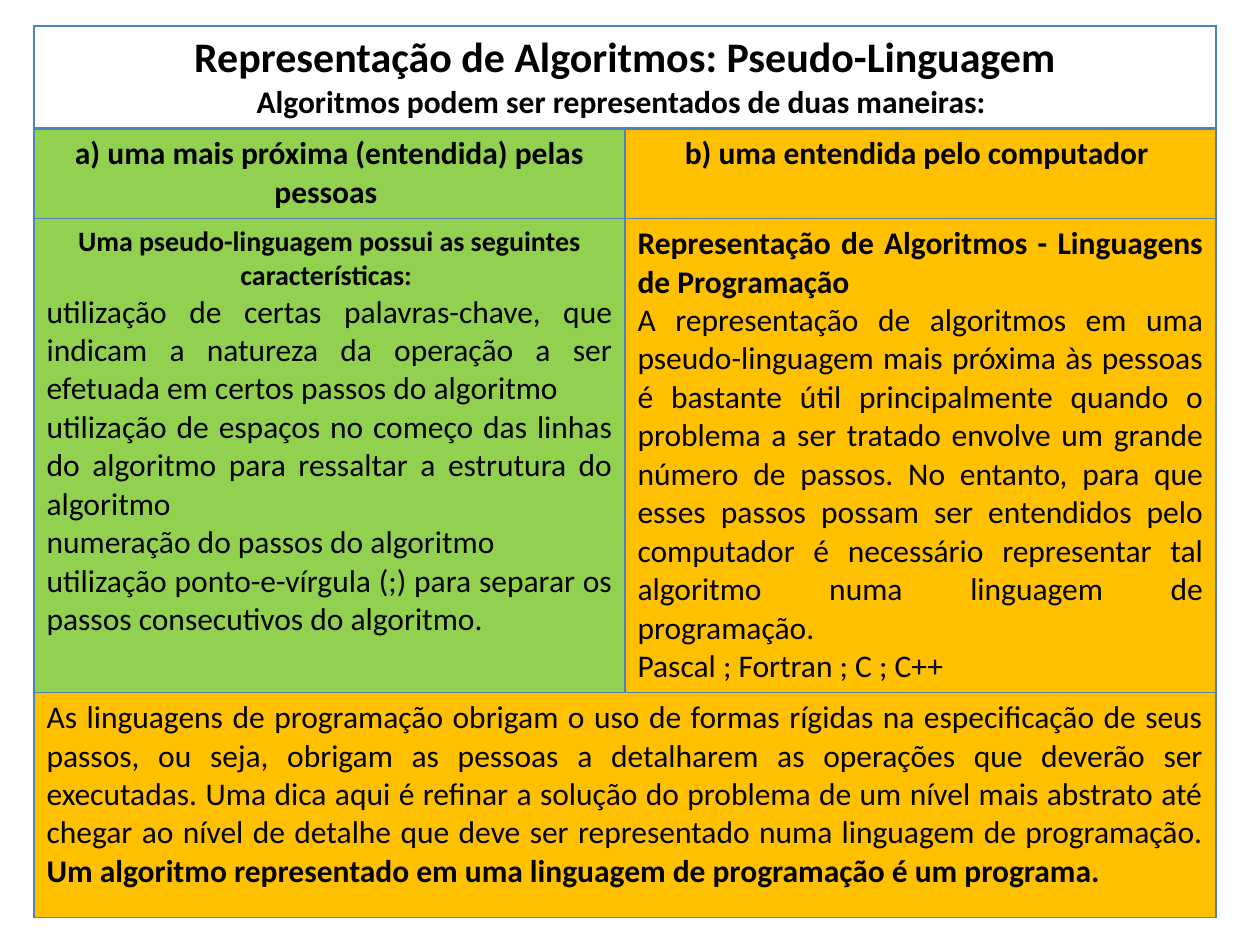
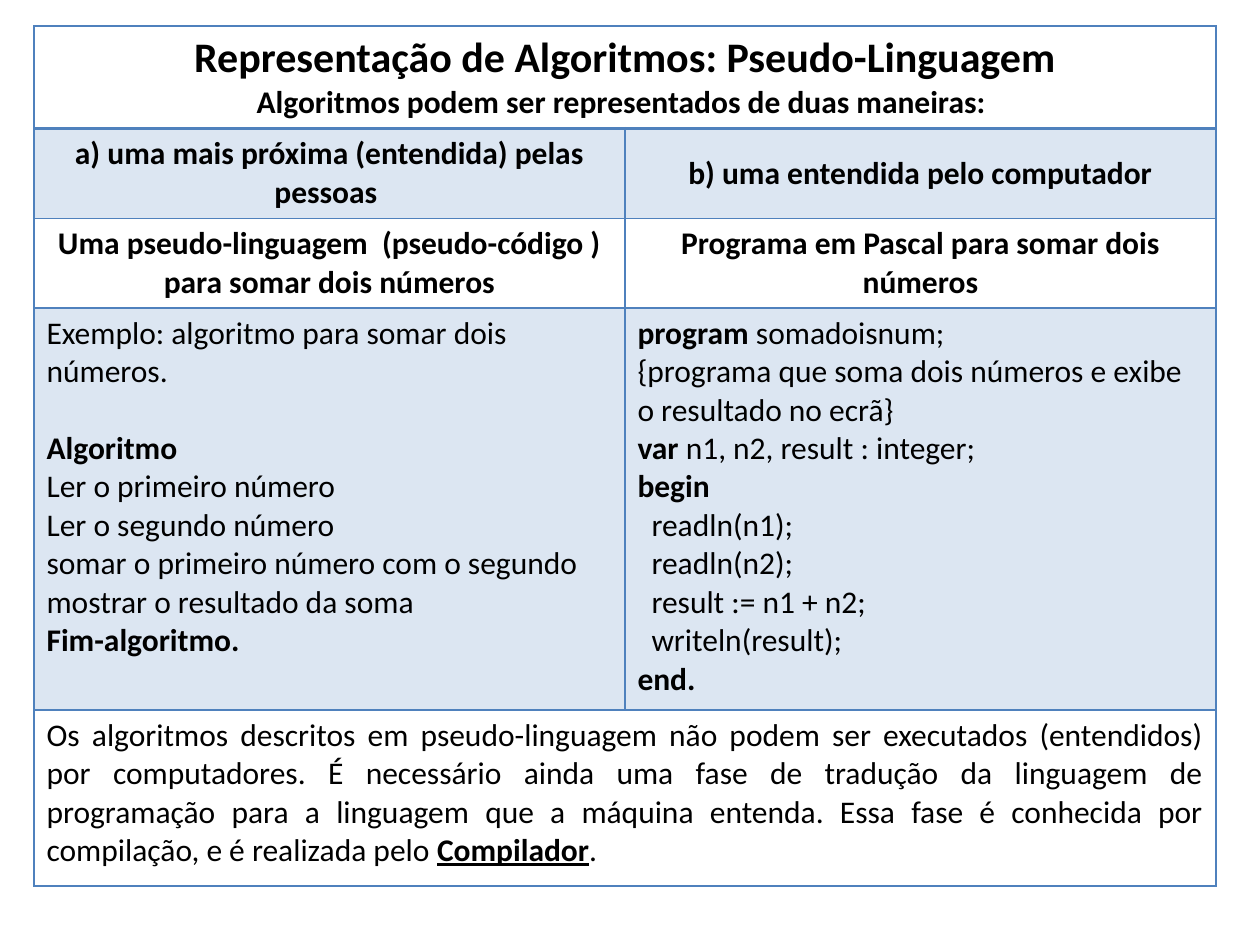
from dataclasses import dataclass

from lxml import etree
from pptx import Presentation, util as u
from pptx.dml.color import RGBColor
from pptx.enum import text
from pptx.oxml.ns import qn

# Shared look
PX_PER_INCH = 126
FONT = "Calibri"
BLACK, BLUE, PALE_BLUE = "000000", "4F81BD", "DCE6F2"
GREEN, AMBER = "92D050", "FFC000"
LEFT, TOP, COLUMN = 34, 26, 591
CENTER, JUSTIFY = text.PP_ALIGN.CENTER, text.PP_ALIGN.JUSTIFY
START = text.PP_ALIGN.LEFT
TOP_ANCHOR, MIDDLE = text.MSO_ANCHOR.TOP, text.MSO_ANCHOR.MIDDLE


@dataclass
class Run:
    words: str
    bold: bool = False
    underline: bool = False


@dataclass
class Para:
    runs: list[Run]
    align: text.PP_ALIGN = START
    size: int = 18
    before: int = 0
    indent: int = 0


@dataclass
class Cell:
    paras: list[Para]
    fill: str | None = None
    anchor: text.MSO_ANCHOR = TOP_ANCHOR


@dataclass
class Row:
    height: int
    cells: list[Cell]  # a single cell spans both columns
    rule: int = 1  # width of the line below, in points


def px(n: int) -> u.Emu:
    return u.Emu(round(n * 914400 / PX_PER_INCH))


def rgb(color: str) -> RGBColor:
    return RGBColor.from_string(color)


def plain(words: str, align: text.PP_ALIGN = START, indent: int = 0) -> Para:
    return Para([Run(words)], align, indent=indent)


def bold(words: str, align: text.PP_ALIGN = START, size: int = 18, before: int = 0) -> Para:
    return Para([Run(words, True)], align, size, before)


def set_border(cell, side: str, points: int) -> None:
    ln = etree.SubElement(cell._tc.get_or_add_tcPr(), qn(f"a:ln{side}"), w=str(u.Pt(points)))
    fill = etree.SubElement(ln, qn("a:solidFill"))
    etree.SubElement(fill, qn("a:srgbClr"), val=BLUE)


def write_para(p, para: Para) -> None:
    p.alignment = para.align
    p.space_before = u.Pt(para.before)
    if para.indent:
        p._p.get_or_add_pPr().set("marL", str(px(para.indent)))
    for run in para.runs:
        r = p.add_run()
        r.text = run.words
        r.font.name, r.font.size = FONT, u.Pt(para.size)
        r.font.bold, r.font.underline = run.bold, run.underline
        r.font.color.rgb = rgb(BLACK)


def write_cell(target, cell: Cell) -> None:
    target.vertical_anchor = cell.anchor
    tf = target.text_frame
    for i, para in enumerate(cell.paras):
        write_para(tf.add_paragraph() if i else tf.paragraphs[0], para)


def add_table_slide(prs, rows: list[Row]) -> None:
    s = prs.slides.add_slide(prs.slide_layouts[6])
    height = sum(row.height for row in rows)
    table = s.shapes.add_table(len(rows), 2, px(LEFT), px(TOP), px(2 * COLUMN), px(height)).table
    table.first_row = table.horz_banding = False
    for column in table.columns:
        column.width = px(COLUMN)
    rule_above = 1
    for y, row in enumerate(rows):
        table.rows[y].height = px(row.height)
        if len(row.cells) == 1:
            table.cell(y, 0).merge(table.cell(y, 1))
        for x in range(2):
            target = table.cell(y, x)
            for side, points in (("L", 1), ("R", 1), ("T", rule_above), ("B", row.rule)):
                set_border(target, side, points)
            fill = row.cells[min(x, len(row.cells) - 1)].fill
            if fill:
                target.fill.solid()
                target.fill.fore_color.rgb = rgb(fill)
            else:
                target.fill.background()
        for x, cell in enumerate(row.cells):
            write_cell(table.cell(y, x), cell)
        rule_above = row.rule


# Rows that open both tables
TITLE_ROW = Row(102, [Cell([
    bold("Representação de Algoritmos: Pseudo-Linguagem", CENTER, 24),
    bold("Algoritmos podem ser representados de duas maneiras: ", CENTER),
])], rule=2)


def heading_row(fills: tuple[str, str], anchor: text.MSO_ANCHOR, second_end: str = "") -> Row:
    headings = ("a) uma mais próxima (entendida) pelas pessoas ",
                "b) uma entendida pelo computador" + second_end)
    return Row(90, [Cell([bold(h, CENTER)], f, anchor) for h, f in zip(headings, fills)])


# Slide 1: the two kinds of representation
KEY_FEATURES = [
    "utilização de certas palavras-chave, que indicam a natureza da operação a ser "
    "efetuada em certos passos do algoritmo",
    "utilização de espaços no começo das linhas do algoritmo para ressaltar a estrutura "
    "do algoritmo",
    "numeração do passos do algoritmo",
    "utilização ponto-e-vírgula (;) para separar os passos consecutivos do algoritmo.",
]
CONCEPTS = [
    TITLE_ROW,
    heading_row((GREEN, AMBER), TOP_ANCHOR, " "),
    Row(474, [
        Cell([bold("Uma pseudo-linguagem possui as seguintes características: ", CENTER, 16)]
             + [plain(feature, JUSTIFY) for feature in KEY_FEATURES], GREEN),
        Cell([
            bold("Representação de Algoritmos - Linguagens de Programação", JUSTIFY),
            plain("A representação de algoritmos em uma pseudo-linguagem mais próxima às "
                  "pessoas é bastante útil principalmente quando o problema a ser tratado "
                  "envolve um grande número de passos. No entanto, para que esses passos "
                  "possam ser entendidos pelo computador é necessário representar tal "
                  "algoritmo numa linguagem de programação.", JUSTIFY),
            plain("Pascal ; Fortran ; C ; C++", JUSTIFY),
        ], AMBER),
    ]),
    Row(225, [Cell([Para([
        Run("As linguagens de programação obrigam o uso de formas rígidas na especificação "
            "de seus passos, ou seja, obrigam as pessoas a detalharem as operações que "
            "deverão ser executadas. Uma dica aqui é refinar a solução do problema de um "
            "nível mais abstrato até chegar ao nível de detalhe que deve ser representado "
            "numa linguagem de programação. "),
        Run("Um algoritmo representado em uma linguagem de programação é um programa.", True),
    ], JUSTIFY)], AMBER)]),
]

# Slide 2: the same sum in pseudo-code and in Pascal
STEPS = ["Ler o primeiro número", "Ler o segundo número",
         "somar o primeiro número com o segundo", "mostrar o resultado da soma"]
STATEMENTS = ["readln(n1);", "readln(n2);", "result := n1 + n2;", "writeln(result);"]
EXAMPLE = [
    TITLE_ROW,
    heading_row((PALE_BLUE, PALE_BLUE), MIDDLE),
    Row(89, [
        Cell([bold("Uma pseudo-linguagem  (pseudo-código ) para somar dois números", CENTER)]),
        Cell([bold("Programa em Pascal para somar dois números", CENTER)]),
    ]),
    Row(402, [
        Cell([plain("Exemplo: algoritmo para somar dois números."),
              bold("Algoritmo", before=22),
              *[plain(step) for step in STEPS],
              bold("Fim-algoritmo.")], PALE_BLUE),
        Cell([Para([Run("program ", True), Run("somadoisnum;")]),
              plain("{programa que soma dois números e exibe o resultado no ecrã}"),
              Para([Run("var", True), Run(" n1, n2, result : integer;")]),
              bold("begin"),
              *[plain(statement, indent=14) for statement in STATEMENTS],
              bold("end.")], PALE_BLUE),
    ]),
    Row(176, [Cell([Para([
        Run("Os algoritmos descritos em pseudo-linguagem não podem ser executados "
            "(entendidos) por computadores. É necessário ainda uma fase de tradução da "
            "linguagem de programação para a linguagem que a máquina entenda. Essa fase é "
            "conhecida por compilação, e é realizada pelo "),
        Run("Compilador", True, True),
        Run("."),
    ], JUSTIFY)])]),
]


def main() -> None:
    prs = Presentation()
    prs.slide_width, prs.slide_height = px(1260), px(945)
    for rows in (CONCEPTS, EXAMPLE):
        add_table_slide(prs, rows)
    prs.save("out.pptx")


if __name__ == "__main__":
    main()
